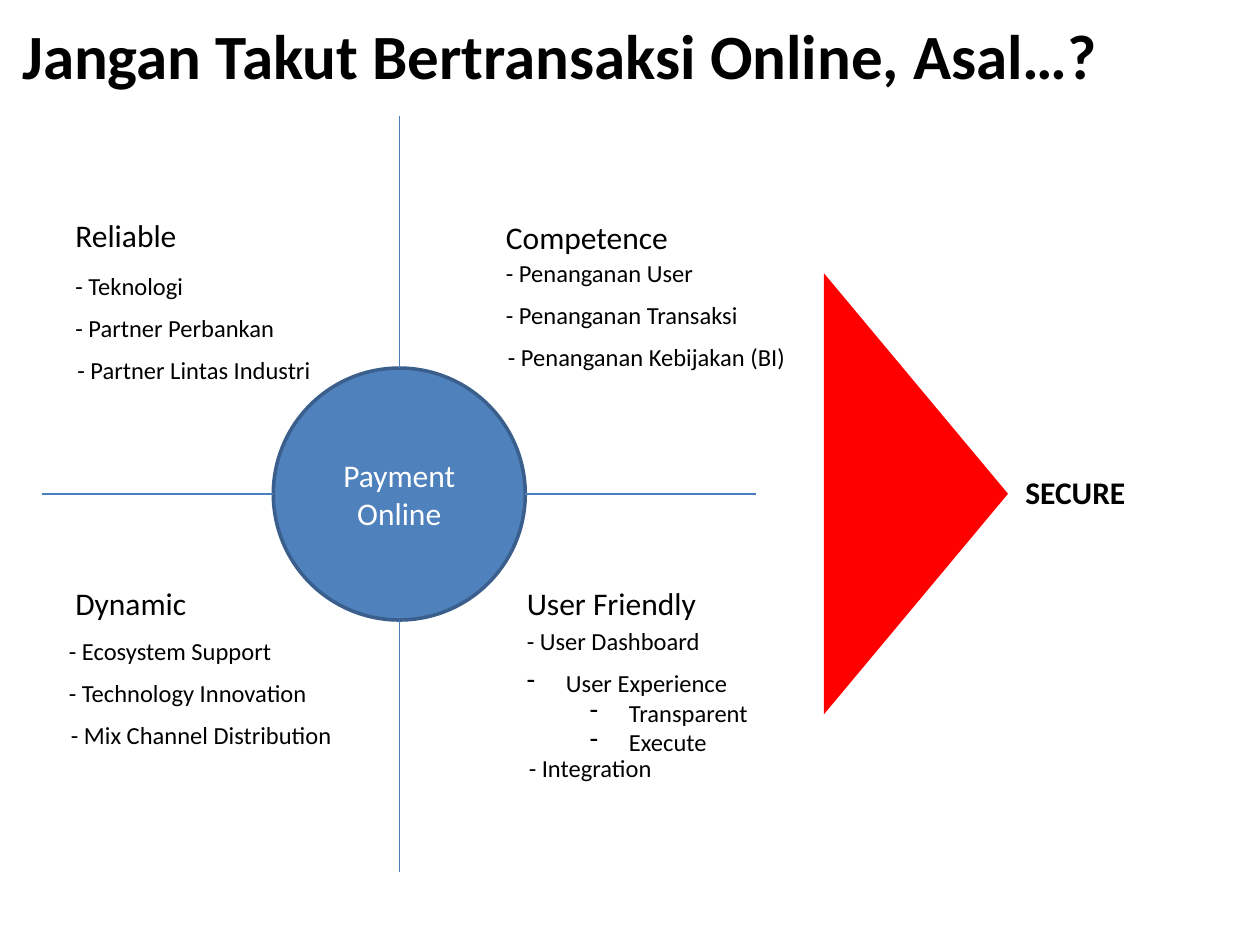
from lxml import etree
from pptx import Presentation, util as u
from pptx.dml import color
from pptx.enum import shapes, text
from pptx.oxml import ns

COLORS = {"blue": "4F81BD", "edge": "3A5F8C", "axis": "4B7EBC",
          "red": "FF0000", "black": "000000", "white": "FFFFFF"}
FONT = "Calibri"
ROW_STEP = 0.85
CENTER_X, CENTER_Y, RADIUS = 8.05, 9.96, 2.54

QUADRANTS = [
    (1.27, 4.24, "Reliable", 2.57, 1.27, 5.33,
     [("- Teknologi", 2.72), ("- Partner Perbankan", 4.57), ("- Partner Lintas Industri", 5.36)]),
    (9.95, 4.27, "Competence", 3.81, 9.95, 5.08,
     [("- Penanganan User", 4.32), ("- Penanganan Transaksi", 5.23),
      ("- Penanganan Kebijakan (BI)", 6.15)]),
    (1.27, 11.64, "Dynamic", 2.77, 1.14, 12.7,
     [("- Ecosystem Support", 4.62), ("- Technology Innovation", 5.36),
      ("- Mix Channel Distribution", 5.82)]),
    (10.37, 11.64, "User Friendly", 3.96, 10.37, 12.5,
     [("- User Dashboard", 4.14),
      ([("User Experience", 0), ("Transparent", 1), ("Execute", 1)], 5.03),
      None, ("- Integration", 3.02)]),
]


def rgb(name):
    return color.RGBColor.from_string(COLORS[name])


def set_dash(paragraph, level):
    paragraph.level = level
    properties = paragraph._p.get_or_add_pPr()
    properties.set("marL", str(u.Cm(0.79 + 1.27 * level)))
    properties.set("indent", str(-u.Cm(0.79)))
    etree.SubElement(properties, ns.qn("a:buFontTx"))
    etree.SubElement(properties, ns.qn("a:buChar"), char="-")


def write(frame, content, size=14, bold=False, fill="black", align=None):
    entries = [(content, None)] if isinstance(content, str) else content
    for index, (words, level) in enumerate(entries):
        paragraph = frame.add_paragraph() if index else frame.paragraphs[0]
        if level is not None:
            set_dash(paragraph, level)
        paragraph.alignment = align
        run = paragraph.add_run()
        run.text = words
        run.font.name = FONT
        run.font.size = u.Pt(size)
        run.font.bold = bold
        run.font.color.rgb = rgb(fill)


def add_label(slide, content, left, top, width, height=0.86, **style):
    box = slide.shapes.add_textbox(u.Cm(left), u.Cm(top), u.Cm(width), u.Cm(height))
    box.text_frame.word_wrap = False
    box.text_frame.auto_size = text.MSO_AUTO_SIZE.SHAPE_TO_FIT_TEXT
    write(box.text_frame, content, **style)


def add_solid(slide, kind, left, top, width, height, fill, edge=None):
    shape = slide.shapes.add_shape(kind, u.Cm(left), u.Cm(top), u.Cm(width), u.Cm(height))
    shape.shadow.inherit = False
    shape.fill.solid()
    shape.fill.fore_color.rgb = rgb(fill)
    if edge:
        shape.line.color.rgb = rgb(edge)
        shape.line.width = u.Pt(2)
    else:
        shape.line.fill.background()
    return shape


def add_axis(slide, *ends):
    line = slide.shapes.add_connector(shapes.MSO_CONNECTOR.STRAIGHT, *map(u.Cm, ends))
    line.line.color.rgb = rgb("axis")
    line.line.width = u.Pt(0.75)
    etree.SubElement(line._element.spPr, ns.qn("a:effectLst"))


def add_hub(slide):
    circle = add_solid(slide, shapes.MSO_SHAPE.OVAL, CENTER_X - RADIUS, CENTER_Y - RADIUS,
                       2 * RADIUS, 2 * RADIUS, "blue", "edge")
    circle.text_frame.vertical_anchor = text.MSO_ANCHOR.MIDDLE
    write(circle.text_frame, "Payment Online", size=18, fill="white",
          align=text.PP_ALIGN.CENTER)
    add_axis(slide, 0.84, CENTER_Y, CENTER_X - RADIUS, CENTER_Y)
    add_axis(slide, CENTER_X + RADIUS, CENTER_Y, 15.24, CENTER_Y)
    add_axis(slide, CENTER_X, CENTER_Y - 3 * RADIUS, CENTER_X, CENTER_Y - RADIUS)
    add_axis(slide, CENTER_X, CENTER_Y + RADIUS, CENTER_X, CENTER_Y + 3 * RADIUS)


def add_quadrant(slide, left, top, heading, width, items_left, items_top, items):
    add_label(slide, heading, left, top, width, 1.02, size=18)
    for row, item in enumerate(items):
        if item:
            content, item_width = item
            shift = 0.04 if row == len(items) - 1 else 0
            height = 2.06 if isinstance(content, list) else 0.86
            add_label(slide, content, items_left + shift, items_top + row * ROW_STEP,
                      item_width, height)


def main():
    presentation = Presentation()
    presentation.slide_width, presentation.slide_height = u.Cm(25.4), u.Cm(19.05)
    slide = presentation.slides.add_slide(presentation.slide_layouts[6])
    add_hub(slide)
    for quadrant in QUADRANTS:
        add_quadrant(slide, *quadrant)
    triangle = add_solid(slide, shapes.MSO_SHAPE.ISOSCELES_TRIANGLE,
                         14.02, 8.1, 8.89, 3.71, "red")
    triangle.rotation = 90
    add_label(slide, "SECURE", 20.42, 9.42, 2.54, 1.02, size=18, bold=True)
    add_label(slide, "Jangan Takut Bertransaksi Online, Asal…?", 0.2, 0.2, 22.43, 1.8,
              size=36, bold=True)
    presentation.save("out.pptx")


if __name__ == "__main__":
    main()
